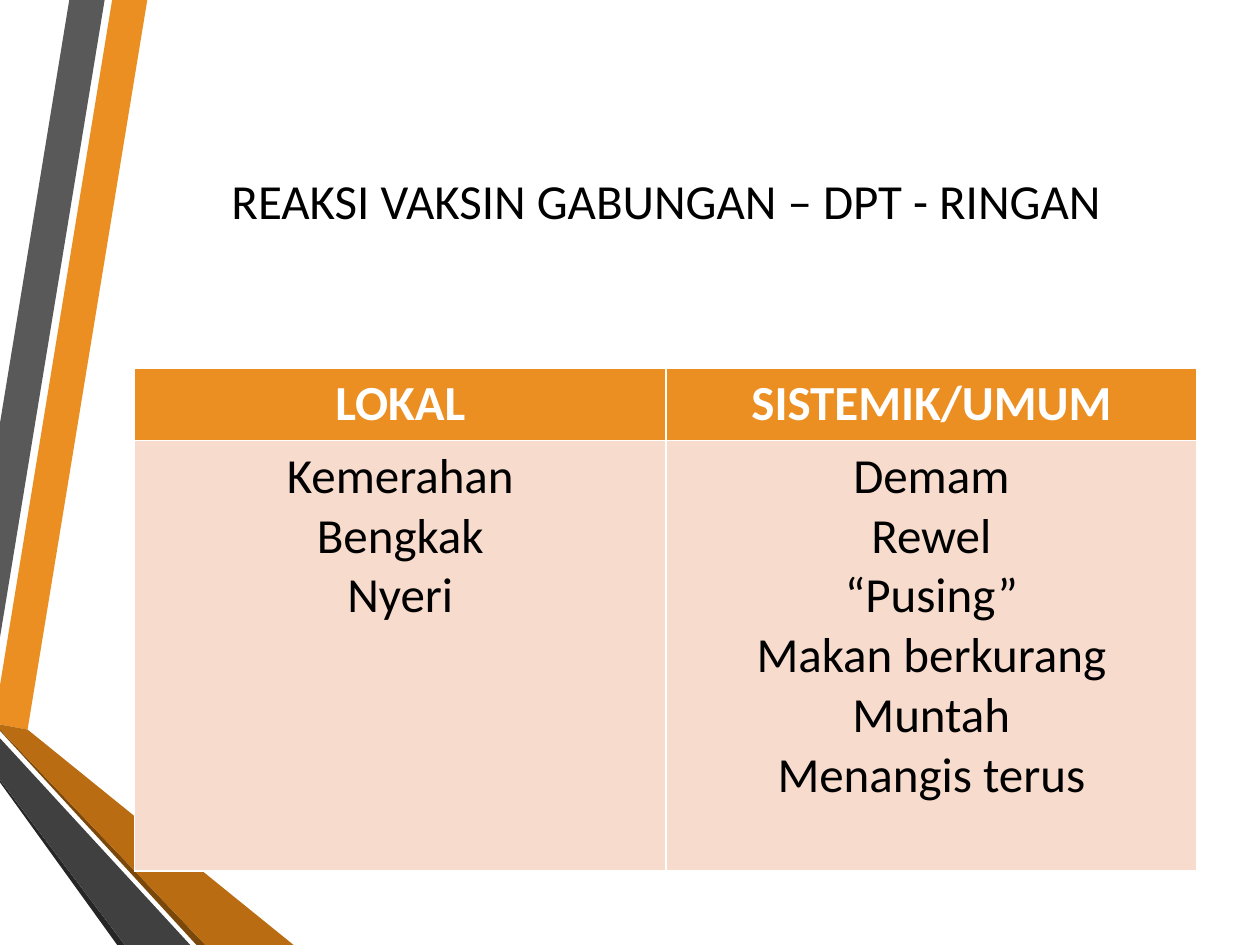
from lxml import etree
from pptx import Presentation
from pptx.dml.color import RGBColor
from pptx.enum.text import MSO_ANCHOR, PP_ALIGN
from pptx.oxml.ns import qn
from pptx.util import Pt

CENTER = PP_ALIGN.CENTER
MIDDLE = MSO_ANCHOR.MIDDLE
TOP = MSO_ANCHOR.TOP

ORANGE = "EB8F22"
WHITE = "FFFFFF"
BLACK = "000000"
PEACH = "F7DBCD"

LEFT, WIDTH = 77, 607

RIBBONS = [
    (ORANGE, [(0, 391.7), (0, 414), (15.8, 416.9), (84.2, 0), (64.1, 0)]),
    ("595959", [(59.8, 0), (39.6, 0), (0, 241.9), (0, 364.3)]),
    ("262626", [(0, 445.7), (0, 447.1), (67, 540), (71.3, 540)]),
    ("7B480B", [(0, 416.9), (0, 417.6), (112.3, 540), (117.4, 540)]),
    ("B96C11", [(0, 416.9), (117.4, 540), (167.8, 540), (15.8, 416.9), (0, 414)]),
    ("404040", [(0, 445.7), (71.3, 540), (108.7, 540), (0, 421.9)]),
]

HEADINGS = ["LOKAL", "SISTEMIK/UMUM"]
REACTIONS = [
    ["Kemerahan", "Bengkak", "Nyeri"],
    ["Demam", "Rewel", "“Pusing”", "Makan berkurang", "Muntah", "Menangis terus"],
]


def color(value):
    return RGBColor.from_string(value)


def write(frame, lines, size=28, ink=BLACK, bold=False, font="Calibri", align=CENTER):
    frame.word_wrap = True
    for index, line in enumerate(lines):
        para = frame.add_paragraph() if index else frame.paragraphs[0]
        para.alignment = align
        span = para.add_run()
        span.text = line
        span.font.name = font
        span.font.size = Pt(size)
        span.font.bold = bold
        span.font.color.rgb = color(ink)


def add_ribbon(page, fill, points):
    corners = [(Pt(x), Pt(y)) for x, y in points]
    builder = page.shapes.build_freeform(*corners[0])
    builder.add_line_segments(corners[1:], close=True)
    ribbon = builder.convert_to_shape()
    ribbon.shadow.inherit = False
    ribbon.fill.solid()
    ribbon.fill.fore_color.rgb = color(fill)
    ribbon.line.fill.background()


def add_title(page, text):
    box = page.shapes.add_textbox(Pt(LEFT), Pt(36), Pt(WIDTH), Pt(156))
    box.text_frame.vertical_anchor = MIDDLE
    write(box.text_frame, [text])


def set_borders(cell, ink, width):
    properties = cell._tc.get_or_add_tcPr()
    for index, side in enumerate(("lnL", "lnR", "lnT", "lnB")):
        line = etree.Element(qn(f"a:{side}"), w=str(Pt(width)))
        fill = etree.SubElement(line, qn("a:solidFill"))
        etree.SubElement(fill, qn("a:srgbClr"), val=ink)
        properties.insert(index, line)


def fill_cell(cell, lines, fill, **style):
    cell.vertical_anchor = TOP
    cell.fill.solid()
    cell.fill.fore_color.rgb = color(fill)
    set_borders(cell, WHITE, 1)
    write(cell.text_frame, lines, **style)


def add_reaction_table(page):
    heights = [41.4, 246.2]
    frame = page.shapes.add_table(
        2, len(HEADINGS), Pt(LEFT), Pt(210.2), Pt(WIDTH), Pt(sum(heights)))
    table = frame.table
    for row, height in zip(table.rows, heights):
        row.height = Pt(height)
    for column, (heading, reactions) in enumerate(zip(HEADINGS, REACTIONS)):
        fill_cell(table.cell(0, column), [heading], ORANGE, ink=WHITE, bold=True)
        fill_cell(table.cell(1, column), reactions, PEACH)


def main():
    deck = Presentation()
    deck.slide_width, deck.slide_height = Pt(720), Pt(540)
    page = deck.slides.add_slide(deck.slide_layouts[6])
    for fill, points in RIBBONS:
        add_ribbon(page, fill, points)
    add_title(page, "REAKSI VAKSIN GABUNGAN – DPT - RINGAN")
    add_reaction_table(page)
    deck.save("out.pptx")


if __name__ == "__main__":
    main()
